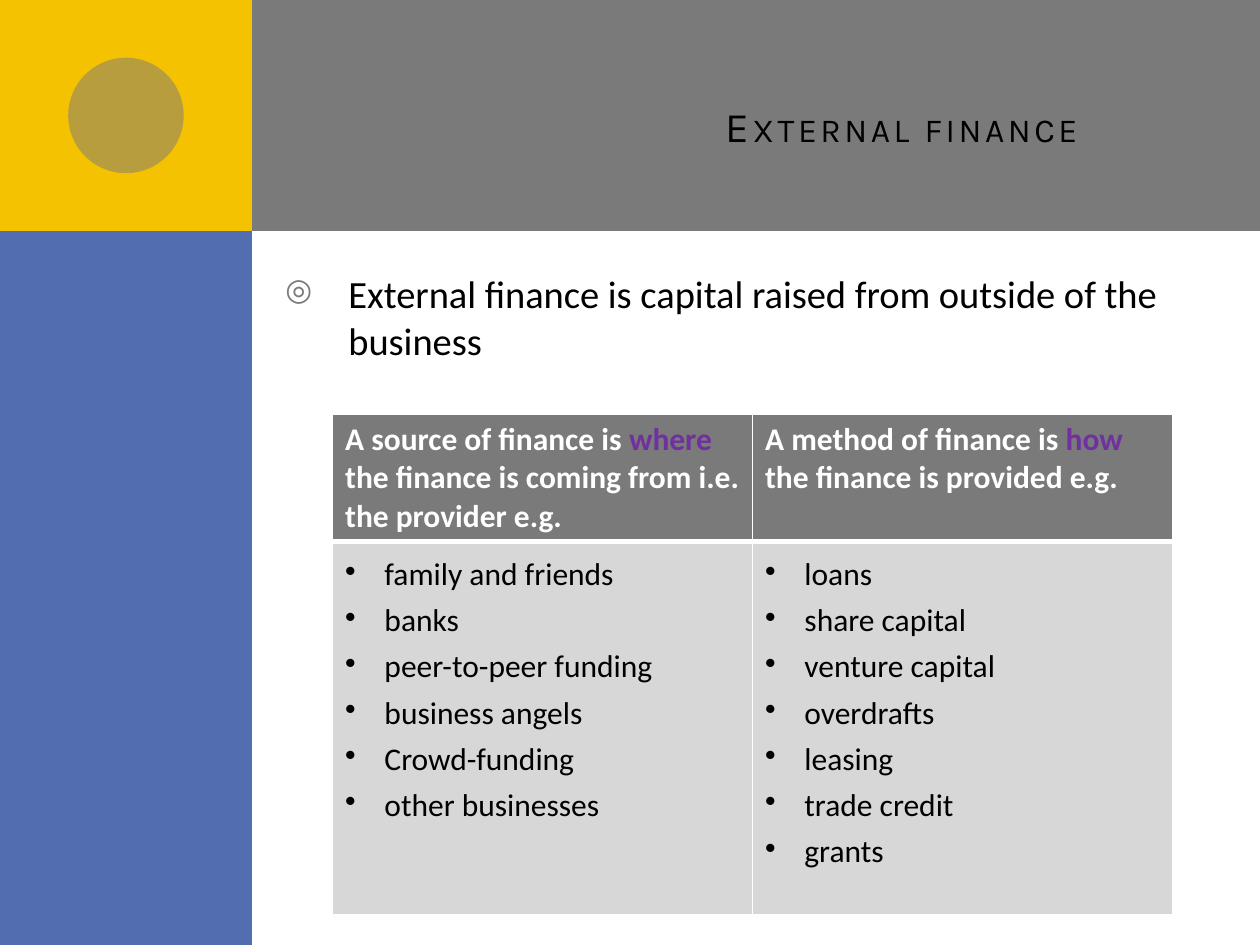
"""Build the External finance slide with its sources and methods table."""
from dataclasses import dataclass

from lxml.etree import SubElement
from pptx import Presentation
from pptx.dml.color import RGBColor
from pptx.enum.shapes import MSO_SHAPE
from pptx.enum.text import MSO_ANCHOR, PP_ALIGN
from pptx.oxml.ns import qn
from pptx.util import Pt

COLORS = {
    "grey": "7A7A7A",
    "blue": "526DB0",
    "yellow": "F5C201",
    "pale": "D7D7D7",
    "purple": "7030A0",
    "white": "FFFFFF",
    "black": "000000",
}


@dataclass
class Panel:
    kind: MSO_SHAPE
    left: float
    top: float
    width: float
    height: float
    color: str
    opacity: int = 100


@dataclass
class Column:
    before: str
    keyword: str
    after: str
    items: list[str]


PANELS = [
    Panel(MSO_SHAPE.RECTANGLE, 36, 0, 684, 132, "grey"),
    Panel(MSO_SHAPE.RECTANGLE, 0, 0, 144, 540, "blue"),
    Panel(MSO_SHAPE.RECTANGLE, 0, 0, 144, 132, "yellow"),
    Panel(MSO_SHAPE.OVAL, 39, 33, 66, 66, "grey", 50),
]
COLUMNS = [
    Column("A source of finance is ", "where", " the finance is coming from i.e. the provider e.g.",
           ["family and friends", "banks", "peer-to-peer funding", "business angels",
            "Crowd-funding", "other businesses"]),
    Column("A method of finance is ", "how", " the finance is provided e.g.",
           ["loans", "share capital", "venture capital", "overdrafts", "leasing",
            "trade credit", "grants"]),
]


def rgb(color: str) -> RGBColor:
    return RGBColor.from_string(COLORS[color])


def format_run(run, size: float, color: str, bold: bool = False, name: str = "Calibri") -> None:
    run.font.name = name
    run.font.size = Pt(size)
    run.font.bold = bold
    run.font.color.rgb = rgb(color)


def add_bullet(paragraph, character: str, indent: float, color: str = "", percent: int = 100) -> None:
    properties = paragraph._p.get_or_add_pPr()
    properties.set("marL", str(Pt(indent)))
    properties.set("indent", str(-Pt(indent)))
    if color:
        bullet_color = SubElement(properties, qn("a:buClr"))
        SubElement(bullet_color, qn("a:srgbClr"), val=COLORS[color])
    SubElement(properties, qn("a:buSzPct"), val=str(percent * 1000))
    SubElement(properties, qn("a:buChar"), char=character)


def add_panel(slide, panel: Panel) -> None:
    shape = slide.shapes.add_shape(panel.kind, Pt(panel.left), Pt(panel.top),
                                   Pt(panel.width), Pt(panel.height))
    shape.shadow.inherit = False
    shape.fill.solid()
    shape.fill.fore_color.rgb = rgb(panel.color)
    shape.line.fill.background()
    if panel.opacity < 100:
        fill_color = shape._element.spPr.find(qn("a:solidFill"))[0]
        SubElement(fill_color, qn("a:alpha"), val=str(panel.opacity * 1000))


def format_title(slide, text: str) -> None:
    title = slide.shapes.title
    slide.shapes._spTree.append(title._element)
    title.left, title.top, title.width, title.height = Pt(192), Pt(18), Pt(492), Pt(108)
    frame = title.text_frame
    frame.text = text
    frame.vertical_anchor = MSO_ANCHOR.MIDDLE
    frame.margin_right = Pt(36)
    paragraph = frame.paragraphs[0]
    paragraph.alignment = PP_ALIGN.RIGHT
    run = paragraph.runs[0]
    format_run(run, 24, "black", name="Karla")
    run.font._element.set("cap", "small")
    run.font._element.set("spc", "200")


def add_body(slide, text: str) -> None:
    frame = slide.shapes.add_textbox(Pt(156), Pt(151), Pt(550), Pt(331)).text_frame
    frame.word_wrap = True
    frame.text = text
    paragraph = frame.paragraphs[0]
    add_bullet(paragraph, "◎", 36, "grey", 80)
    format_run(paragraph.runs[0], 22, "black")


def format_cell(cell, fill: str, top: float, bottom: float) -> None:
    properties = cell._tc.get_or_add_tcPr()
    for side, width in {"L": 1, "R": 1, "T": top, "B": bottom}.items():
        line = SubElement(properties, qn(f"a:ln{side}"), w=str(Pt(width)))
        SubElement(SubElement(line, qn("a:solidFill")), qn("a:srgbClr"), val=COLORS["white"])
    cell.fill.solid()
    cell.fill.fore_color.rgb = rgb(fill)


def fill_header(cell, column: Column) -> None:
    format_cell(cell, "grey", 1, 3)
    paragraph = cell.text_frame.paragraphs[0]
    for text, color in ((column.before, "white"), (column.keyword, "purple"), (column.after, "white")):
        run = paragraph.add_run()
        run.text = text
        format_run(run, 18, color, bold=True)


def fill_items(cell, column: Column) -> None:
    format_cell(cell, "pale", 3, 1)
    cell.text_frame.text = "\n".join(column.items)
    for paragraph in cell.text_frame.paragraphs:
        paragraph.line_spacing = 1.2
        add_bullet(paragraph, "•", 22.5)
        format_run(paragraph.runs[0], 18, "black")


def add_finance_table(slide, columns: list[Column]) -> None:
    table = slide.shapes.add_table(2, len(columns), Pt(190), Pt(236.5), Pt(480), Pt(286)).table
    table.horz_banding = False
    table.rows[0].height, table.rows[1].height = Pt(73), Pt(213)
    for index, column in enumerate(columns):
        fill_header(table.cell(0, index), column)
        fill_items(table.cell(1, index), column)


def main() -> None:
    presentation = Presentation()
    presentation.slide_width, presentation.slide_height = Pt(720), Pt(540)
    slide = presentation.slides.add_slide(presentation.slide_layouts[5])
    for panel in PANELS:
        add_panel(slide, panel)
    format_title(slide, "External finance")
    add_body(slide, "External finance is capital raised from outside of the business")
    add_finance_table(slide, COLUMNS)
    presentation.save("out.pptx")


if __name__ == "__main__":
    main()
